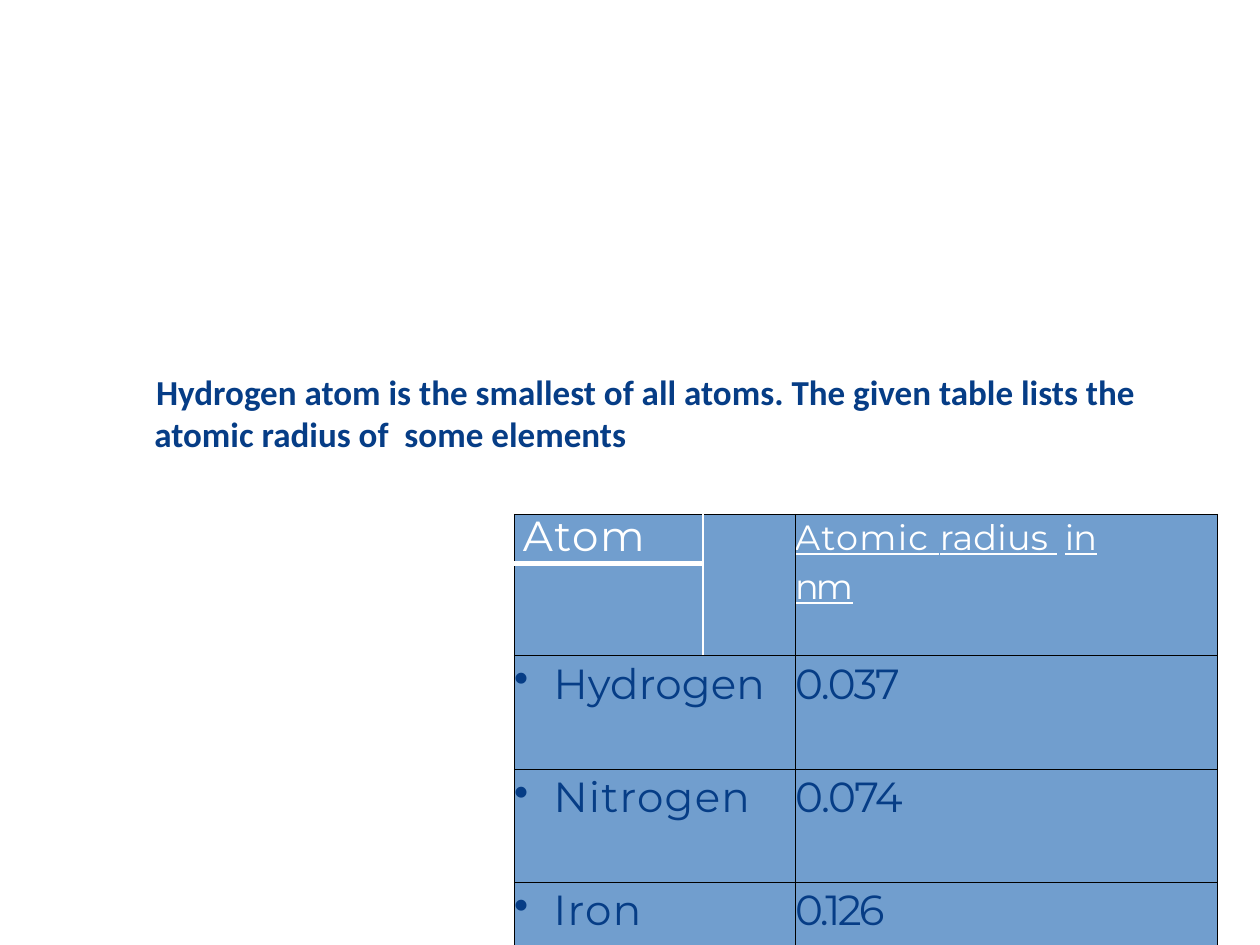
from lxml import etree
from pptx import Presentation
from pptx import util as u
from pptx.dml.color import RGBColor
from pptx.enum import text
from pptx.oxml.ns import qn

COLORS = {"navy": "063D86", "blue": "719ECE", "white": "FFFFFF", "black": "000000"}
THIN, THICK = ("black", 0.5), ("white", 3)
GRID = dict.fromkeys("LRTB", THIN)


def color(name):
    return RGBColor.from_string(COLORS[name])


def add_run(paragraph, words, size=24, fill="navy", font="Montserrat",
            bold=False, underline=False, spacing=0):
    run = paragraph.add_run()
    run.text = words
    run.font.name, run.font.size = font, u.Pt(size)
    run.font.bold, run.font.underline = bold, underline
    run.font.color.rgb = color(fill)
    if spacing:
        run.font._element.set("spc", str(round(spacing * 100)))


def set_indent(paragraph, left, first=0, bullet=None):
    properties = paragraph._p.get_or_add_pPr()
    properties.set("marL", str(u.Pt(left)))
    properties.set("indent", str(u.Pt(first)))
    if bullet:
        etree.SubElement(properties, qn("a:buChar"), char=bullet)


class SlideBuilder:
    def __init__(self, slide):
        self.slide = slide
        self.inset = 1.5

    def set_margins(self, target):
        target.margin_left = target.margin_right = target.margin_bottom = 0
        target.margin_top = u.Pt(self.inset)

    def text_box(self, left, top, width, height, words, **style):
        shape = self.slide.shapes.add_textbox(*map(u.Pt, (left, top, width, height)))
        frame = shape.text_frame
        frame.word_wrap = True
        frame.vertical_anchor = text.MSO_ANCHOR.TOP
        self.set_margins(frame)
        set_indent(frame.paragraphs[0], 22, 1)
        add_run(frame.paragraphs[0], words, **style)

    def table(self, left, top, columns, rows):
        frame = self.slide.shapes.add_table(
            len(rows), len(columns), u.Pt(left), u.Pt(top),
            u.Pt(sum(columns)), u.Pt(sum(rows)))
        table = frame.table
        table.first_row = table.horz_banding = False
        for column, width in zip(table.columns, columns):
            column.width = u.Pt(width)
        for row, height in zip(table.rows, rows):
            row.height = u.Pt(height)
        return table

    def format_cell(self, cell, borders):
        cell.fill.solid()
        cell.fill.fore_color.rgb = color("blue")
        properties = cell._tc.get_or_add_tcPr()
        sides = [side for side in "LRTB" if side in borders]
        for index, side in enumerate(sides):
            name, width = borders[side]
            line = etree.Element(qn(f"a:ln{side}"), w=str(u.Pt(width)))
            fill = etree.SubElement(line, qn("a:solidFill"))
            etree.SubElement(fill, qn("a:srgbClr"), val=COLORS[name])
            properties.insert(index, line)

    def cell_paragraph(self, cell):
        self.set_margins(cell)
        return cell.text_frame.paragraphs[0]


def main():
    presentation = Presentation()
    presentation.slide_width, presentation.slide_height = u.Pt(720), u.Pt(540)
    builder = SlideBuilder(presentation.slides.add_slide(presentation.slide_layouts[6]))

    # Introduction
    builder.text_box(
        66.2, 210.2, 624.2, 74.9,
        "Hydrogen atom is the smallest of all atoms. The given table lists the "
        "atomic radius of  some elements",
        size=20, font="Calibri", bold=True)

    # Table grid: the second column only carries the end of the header row
    table = builder.table(293.8, 293.8, [108, 52.6, 241.2], [28.1, 27.4, 64.8, 64.8, 36])
    special_borders = {
        (0, 0): {"L": THIN, "T": THIN, "B": THICK},
        (1, 0): {"L": THIN, "T": THICK, "B": THIN},
        (0, 1): {"R": THIN, "T": THIN, "B": THIN},
        (1, 1): {"R": THIN, "B": THIN},
    }
    for row in range(len(table.rows)):
        for column in range(len(table.columns)):
            builder.format_cell(table.cell(row, column),
                                special_borders.get((row, column), GRID))
    for column in (1, 2):
        table.cell(0, column).merge(table.cell(1, column))

    # Header
    paragraph = builder.cell_paragraph(table.cell(0, 0))
    set_indent(paragraph, 5)
    paragraph.line_spacing = u.Pt(26.1)
    add_run(paragraph, "Atom", fill="white", spacing=0.9)

    header = dict(size=20, fill="white", underline=True)
    paragraph = builder.cell_paragraph(table.cell(0, 2))
    for words, spacing in (("Atomic ", 0.7), ("radius", 0.1), (" ", 4.3), ("in", -0.5)):
        add_run(paragraph, words, spacing=spacing, **header)
    paragraph = table.cell(0, 2).text_frame.add_paragraph()
    paragraph.space_before = u.Pt(3.3)
    add_run(paragraph, "nm", spacing=-1.7, **header)

    # Elements and their radii, each with its letter spacing
    elements = [
        ("Hydrogen", 0.1, "0.037", -0.9),
        ("Nitrogen", 0.7, "0.074", -0.8),
        ("Iron", 0.8, "0.126", -1.6),
    ]
    for row, (name, name_spacing, radius, radius_spacing) in enumerate(elements, start=2):
        table.cell(row, 0).merge(table.cell(row, 1))
        paragraph = builder.cell_paragraph(table.cell(row, 0))
        set_indent(paragraph, 22.5, -22.5, bullet="•")
        add_run(paragraph, name, spacing=name_spacing)
        paragraph = builder.cell_paragraph(table.cell(row, 2))
        add_run(paragraph, radius, spacing=radius_spacing)

    presentation.save("out.pptx")


if __name__ == "__main__":
    main()
